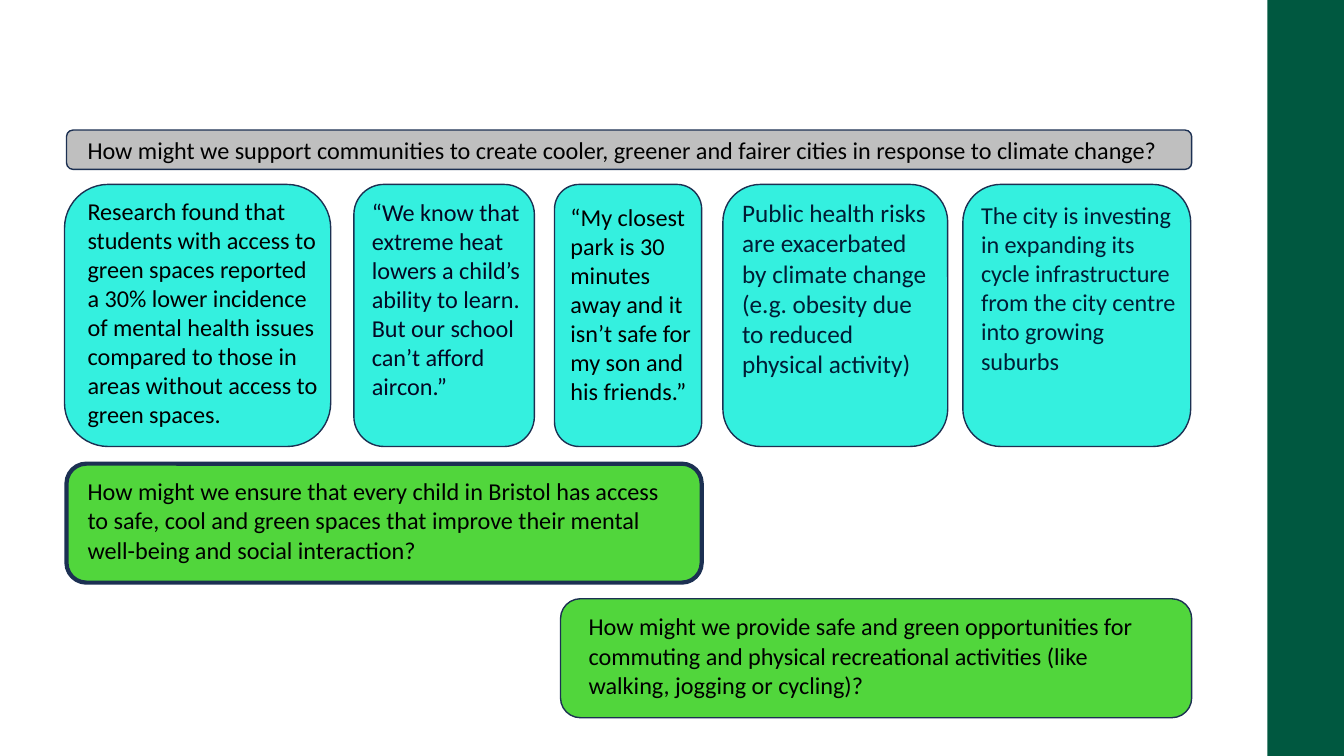
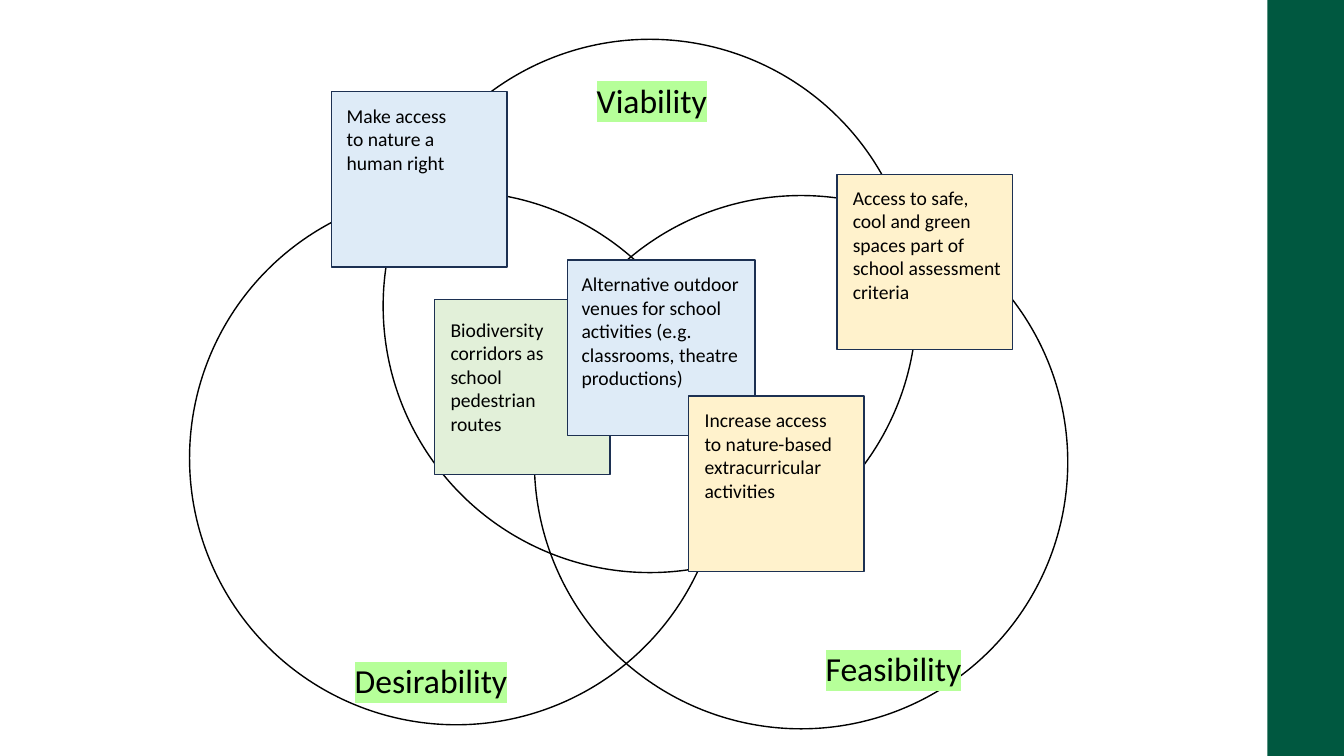
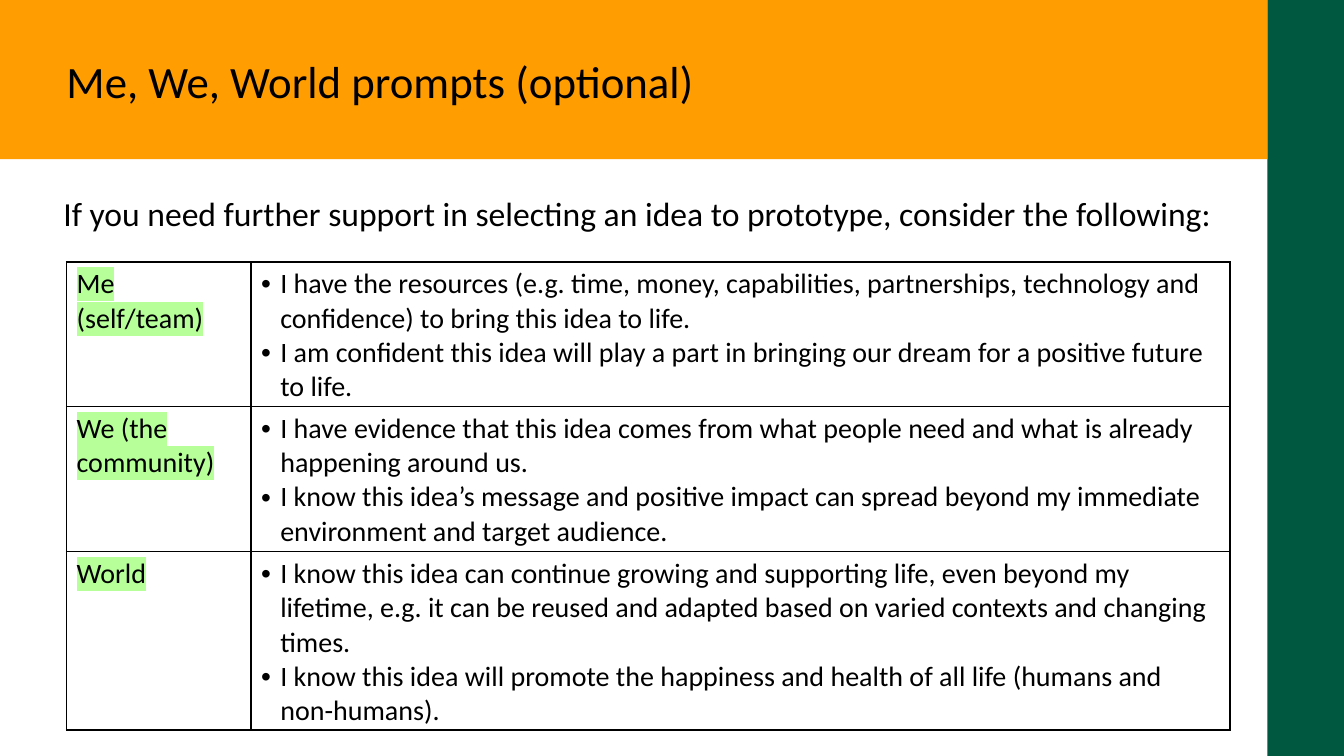
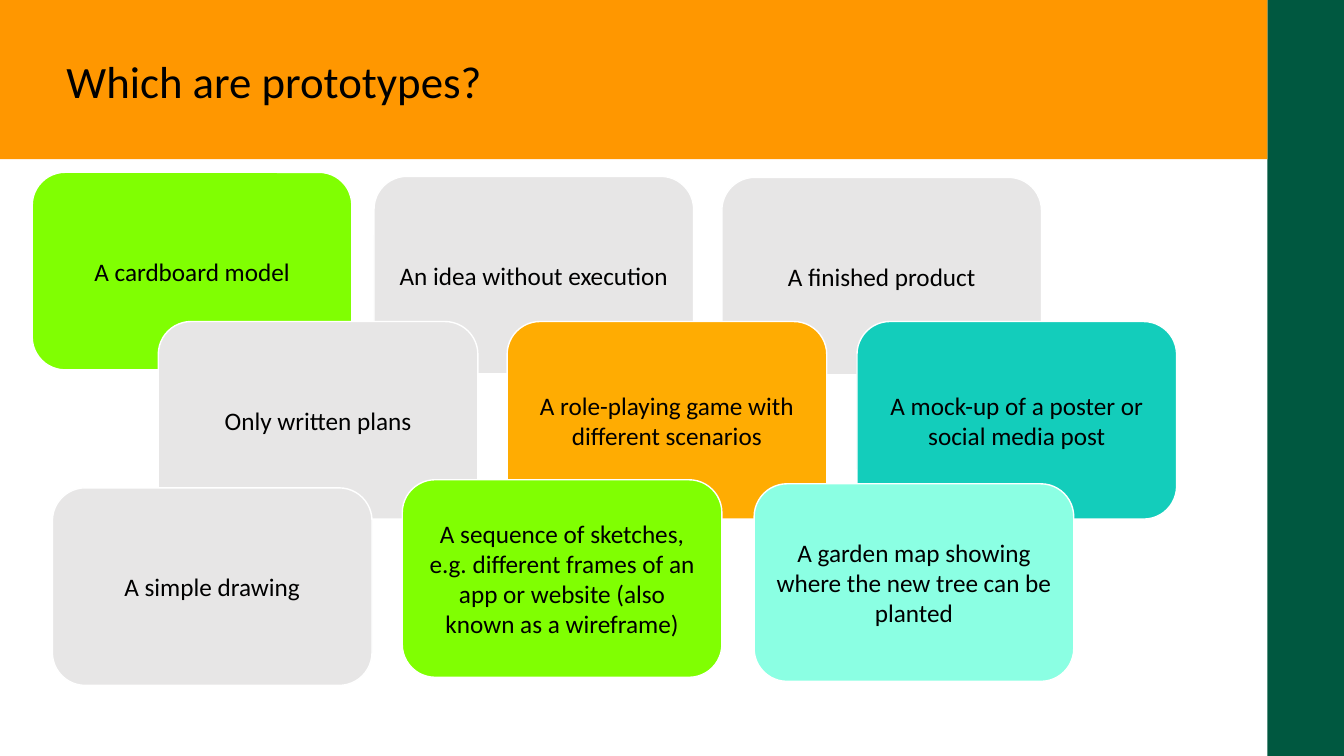
from dataclasses import dataclass

import lxml.etree
import pptx
import pptx.dml.color
import pptx.enum.shapes
import pptx.enum.text
import pptx.oxml.ns
import pptx.shapes.autoshape
import pptx.slide
import pptx.text.text
import pptx.util

# Grid: square cells, 13.33 columns by 7.5 rows
CELL = pptx.util.Inches(1)
COLS, ROWS = 13.33, 7.5
EDGE = 12.57  # column where the side band starts
FONT = "Calibri"

BLACK, WHITE, NAVY, INK = "000000", "FFFFFF", "1C3052", "001D35"
FOREST, LEAF, AQUA, GREY = "005840", "51D63C", "34F0DF", "BFBFBF"
MINT, SKY, CREAM, SAGE = "B6FF99", "DEEBF7", "FFF2CC", "E2F0D9"
LIME, PALE = "80FF02", "E7E6E6"

KIND = pptx.enum.shapes.MSO_SHAPE
ALIGN = pptx.enum.text.PP_ALIGN
TIGHT, PLAIN, LOOSE = (0, 0), (0.1, 0.05), (0.13, 0.13)


@dataclass
class Box:
    """Left, top, width and height in grid cells."""
    left: float
    top: float
    wide: float
    high: float

    def emu(self) -> tuple[int, ...]:
        return tuple(cells(n) for n in (self.left, self.top, self.wide, self.high))


@dataclass
class Style:
    size: float
    color: str = BLACK
    mark: str = ""
    space: float = 1.0


@dataclass
class Panel:
    """A filled shape with its words set in a box on top."""
    frame: Box
    words: Box
    fill: str
    text: str
    style: Style
    inset: tuple[float, float] = PLAIN
    line: float = 1


@dataclass
class Card:
    left: float
    top: float
    fill: str
    text: str


@dataclass
class Prompt:
    name: str
    high: float
    points: list[str]


# Helpers
def cells(count: float) -> int:
    return round(count * CELL)


def rgb(code: str) -> pptx.dml.color.RGBColor:
    return pptx.dml.color.RGBColor.from_string(code)


def add_xml(parent, tag: str, **attrs: str):
    return lxml.etree.SubElement(parent, pptx.oxml.ns.qn(tag), attrs)


def add_run(para: pptx.text.text._Paragraph, text: str, style: Style) -> None:
    run = para.add_run()
    run.text = text
    run.font.name = FONT
    run.font.size = pptx.util.Pt(style.size)
    run.font.color.rgb = rgb(style.color)
    if style.mark:
        props = run.font.fill._xPr
        mark = add_xml(props, "a:highlight")
        add_xml(mark, "a:srgbClr", val=style.mark)
        props.find(pptx.oxml.ns.qn("a:solidFill")).addnext(mark)


def add_text(slide: pptx.slide.Slide, box: Box, text: str, style: Style,
             inset: tuple[float, float] = PLAIN) -> None:
    frame = slide.shapes.add_textbox(*box.emu()).text_frame
    frame.word_wrap = True
    frame.margin_left = frame.margin_right = cells(inset[0])
    frame.margin_top = frame.margin_bottom = cells(inset[1])
    para = frame.paragraphs[0]
    para.line_spacing = style.space
    add_run(para, text, style)


def add_shape(slide: pptx.slide.Slide, kind: KIND, box: Box, fill: str = "",
              line: str = "", width: float = 1) -> pptx.shapes.autoshape.Shape:
    shape = slide.shapes.add_shape(kind, *box.emu())
    shape.shadow.inherit = False
    if fill:
        shape.fill.solid()
        shape.fill.fore_color.rgb = rgb(fill)
    else:
        shape.fill.background()
    if line:
        shape.line.color.rgb = rgb(line)
        shape.line.width = pptx.util.Pt(width)
    else:
        shape.line.fill.background()
    return shape


def add_panel(slide: pptx.slide.Slide, kind: KIND, panel: Panel) -> None:
    add_shape(slide, kind, panel.frame, panel.fill, NAVY, panel.line)
    add_text(slide, panel.words, panel.text, panel.style, panel.inset)


def add_title(slide: pptx.slide.Slide, text: str, fill: str) -> None:
    add_shape(slide, KIND.RECTANGLE, Box(0, 0, EDGE, 1.58), fill)
    add_text(slide, Box(0.66, 0.53, 11.33, 0.52), text, Style(32), TIGHT)


def add_band(slide: pptx.slide.Slide) -> None:
    """Place the side band on the layout, behind every slide."""
    band = add_shape(slide, KIND.RECTANGLE, Box(EDGE, 0, COLS - EDGE, ROWS), FOREST)
    slide.slide_layout.shapes.element.append(band.element)


# Slide 1: from findings to questions
BODY = Style(17.3)
CARD_TOP, CARD_HIGH = 1.83, 2.6


def fact(left: float, wide: float, words: Box, text: str, style: Style = BODY,
         inset: tuple[float, float] = PLAIN) -> Panel:
    return Panel(Box(left, CARD_TOP, wide, CARD_HIGH), words, AQUA, text, style, inset)


PANELS = [
    Panel(Box(0.66, 1.29, 11.16, 0.39), Box(0.77, 1.29, 11.14, 0.39), GREY,
          "How might we support communities to create cooler, greener and fairer "
          "cities in response to climate change?", BODY),
    fact(0.64, 2.64, Box(0.77, 1.9, 2.53, 2.43),
         "Research found that students with access to green spaces reported a 30% "
         "lower incidence of mental health issues compared to those in areas "
         "without access to green spaces."),
    fact(3.51, 1.79, Box(3.59, 1.91, 1.7, 2.14),
         "“We know that extreme heat lowers a child’s ability to learn. But our "
         "school can’t afford aircon.”", Style(17.3, "040824")),
    fact(5.5, 1.46, Box(5.56, 1.96, 1.4, 2.14),
         "“My closest park is 30 minutes away and it isn’t safe for my son and "
         "his friends.”"),
    fact(7.17, 2.23, Box(7.23, 1.83, 2.12, 2.09),
         "Public health risks are exacerbated by climate change (e.g. obesity due "
         "to reduced physical activity)", Style(18, INK), LOOSE),
    fact(9.55, 2.26, Box(9.6, 1.86, 2.22, 2.02),
         "The city is investing in expanding its cycle infrastructure from the "
         "city centre into growing suburbs", Style(17.3, INK), LOOSE),
    Panel(Box(0.66, 4.6, 6.3, 1.18), Box(0.77, 4.68, 6.12, 0.98), LEAF,
          "How might we ensure that every child in Bristol has access to safe, cool "
          "and green spaces that improve their mental well-being and social "
          "interaction?", BODY, line=3),
    Panel(Box(5.56, 5.94, 6.26, 1.18), Box(5.74, 6.02, 5.93, 0.98), LEAF,
          "How might we provide safe and green opportunities for commuting and "
          "physical recreational activities (like walking, jogging or cycling)?", BODY),
]


def draw_facts(slide: pptx.slide.Slide) -> None:
    for panel in PANELS:
        add_panel(slide, KIND.ROUNDED_RECTANGLE, panel)


# Slide 2: three circles with notes
RING, SIDE = 5.29, 1.74
RINGS = [(1.88, 1.9), (3.8, 0.39), (5.3, 1.94)]
LABELS = [("Feasibility", 8.09, 6.18), ("Desirability", 3.42, 6.3),
          ("Viability", 5.82, 0.54)]


def note(left: float, top: float, words: Box, fill: str, text: str,
         wide: float = SIDE) -> Panel:
    return Panel(Box(left, top, wide, SIDE), words, fill, text, Style(14))


NOTES = [
    note(4.31, 2.97, Box(4.37, 3.1, 1.27, 1.28), SAGE,
         "Biodiversity corridors as school pedestrian routes"),
    note(3.29, 0.91, Box(3.34, 0.98, 1.27, 0.81), SKY,
         "Make access to nature a human right"),
    note(8.3, 1.73, Box(8.36, 1.79, 1.67, 1.28), CREAM,
         "Access to safe, cool and green spaces part of school assessment criteria"),
    note(5.63, 2.58, Box(5.67, 2.65, 1.83, 1.28), SKY,
         "Alternative outdoor venues for school activities (e.g. classrooms, "
         "theatre productions)", 1.86),
    note(6.83, 3.93, Box(6.89, 4, 1.54, 1.04), CREAM,
         "Increase access to nature-based extracurricular activities"),
]


def draw_rings(slide: pptx.slide.Slide) -> None:
    for left, top in RINGS:
        add_shape(slide, KIND.OVAL, Box(left, top, RING, RING), line=BLACK)
    for item in NOTES:
        add_panel(slide, KIND.RECTANGLE, item)
    for text, left, top in LABELS:
        add_text(slide, Box(left, top, 4, 0.64), text, Style(24, mark=MINT, space=1.5))


# Slide 3: table of prompts
PROMPTS = [
    Prompt("Me (self/team)", 1.43, [
        "I have the resources (e.g. time, money, capabilities, partnerships, "
        "technology and confidence) to bring this idea to life.",
        "I am confident this idea will play a part in bringing our dream for a "
        "positive future to life."]),
    Prompt("We (the community)", 1.44, [
        "I have evidence that this idea comes from what people need and what is "
        "already happening around us.",
        "I know this idea’s message and positive impact can spread beyond my "
        "immediate environment and target audience."]),
    Prompt("World", 1.76, [
        "I know this idea can continue growing and supporting life, even beyond my "
        "lifetime, e.g. it can be reused and adapted based on varied contexts and "
        "changing times.",
        "I know this idea will promote the happiness and health of all life "
        "(humans and non-humans)."]),
]
WIDTHS = (1.83, 9.71)


def add_bullet(para: pptx.text.text._Paragraph) -> None:
    props = para._p.get_or_add_pPr()
    dent = cells(0.19)
    props.set("marL", str(dent))
    props.set("indent", str(-dent))
    add_xml(props, "a:buFont", typeface="Arial")
    add_xml(props, "a:buChar", char="•")


def frame_cell(cell) -> None:
    props = cell._tc.get_or_add_tcPr()
    for side in "LRTB":
        line = add_xml(props, f"a:ln{side}", w=str(pptx.util.Pt(1)))
        add_xml(add_xml(line, "a:solidFill"), "a:srgbClr", val=BLACK)
    cell.fill.background()


def draw_table(slide: pptx.slide.Slide) -> None:
    add_title(slide, "Me, We, World prompts (optional)", "FF9D01")
    add_text(slide, Box(0.53, 1.86, 12.12, 0.5),
             "If you need further support in selecting an idea to prototype, "
             "consider the following:", Style(24))
    area = Box(0.66, 2.6, sum(WIDTHS), sum(item.high for item in PROMPTS))
    table = slide.shapes.add_table(len(PROMPTS), len(WIDTHS), *area.emu()).table
    table.first_row = table.horz_banding = False
    for col, wide in zip(table.columns, WIDTHS):
        col.width = cells(wide)
    for row, item in zip(table.rows, PROMPTS):
        row.height = cells(item.high)
        head, body = row.cells
        frame_cell(head)
        frame_cell(body)
        add_run(head.text_frame.paragraphs[0], item.name, Style(20, mark=MINT))
        for index, point in enumerate(item.points):
            frame = body.text_frame
            para = frame.add_paragraph() if index else frame.paragraphs[0]
            add_bullet(para)
            add_run(para, point, Style(20))


# Slide 4: cards in three rows
CARDS = [
    Card(0.32, 1.71, LIME, "A cardboard model"),
    Card(3.71, 1.75, PALE, "An idea without execution"),
    Card(7.16, 1.76, PALE, "A finished product"),
    Card(1.57, 3.19, PALE, "Only written plans"),
    Card(5.03, 3.19, "FFAC02", "A role-playing game with different scenarios"),
    Card(8.5, 3.19, "13CDBB", "A mock-up of a poster or social media post"),
    Card(0.52, 4.84, PALE, "A simple drawing"),
    Card(3.99, 4.76, LIME, "A sequence of sketches, e.g. different frames of an app "
                           "or website (also known as a wireframe)"),
    Card(7.48, 4.8, "8BFFE3", "A garden map showing where the new tree can be planted"),
]


def draw_cards(slide: pptx.slide.Slide) -> None:
    add_title(slide, "Which are prototypes?", "FF9700")
    for card in CARDS:
        shape = add_shape(slide, KIND.ROUNDED_RECTANGLE,
                          Box(card.left, card.top, 3.17, 1.96), card.fill, WHITE)
        frame = shape.text_frame
        frame.word_wrap = True
        frame.vertical_anchor = pptx.enum.text.MSO_ANCHOR.MIDDLE
        para = frame.paragraphs[0]
        para.alignment = ALIGN.CENTER
        para.space_after = pptx.util.Pt(12)
        add_run(para, card.text, Style(18))


def main() -> None:
    deck = pptx.Presentation()
    deck.slide_width, deck.slide_height = cells(COLS), cells(ROWS)
    blank = deck.slide_layouts[6]
    for index, draw in enumerate((draw_facts, draw_rings, draw_table, draw_cards)):
        slide = deck.slides.add_slide(blank)
        if index == 0:
            add_band(slide)
        draw(slide)
    deck.save("out.pptx")


if __name__ == "__main__":
    main()
